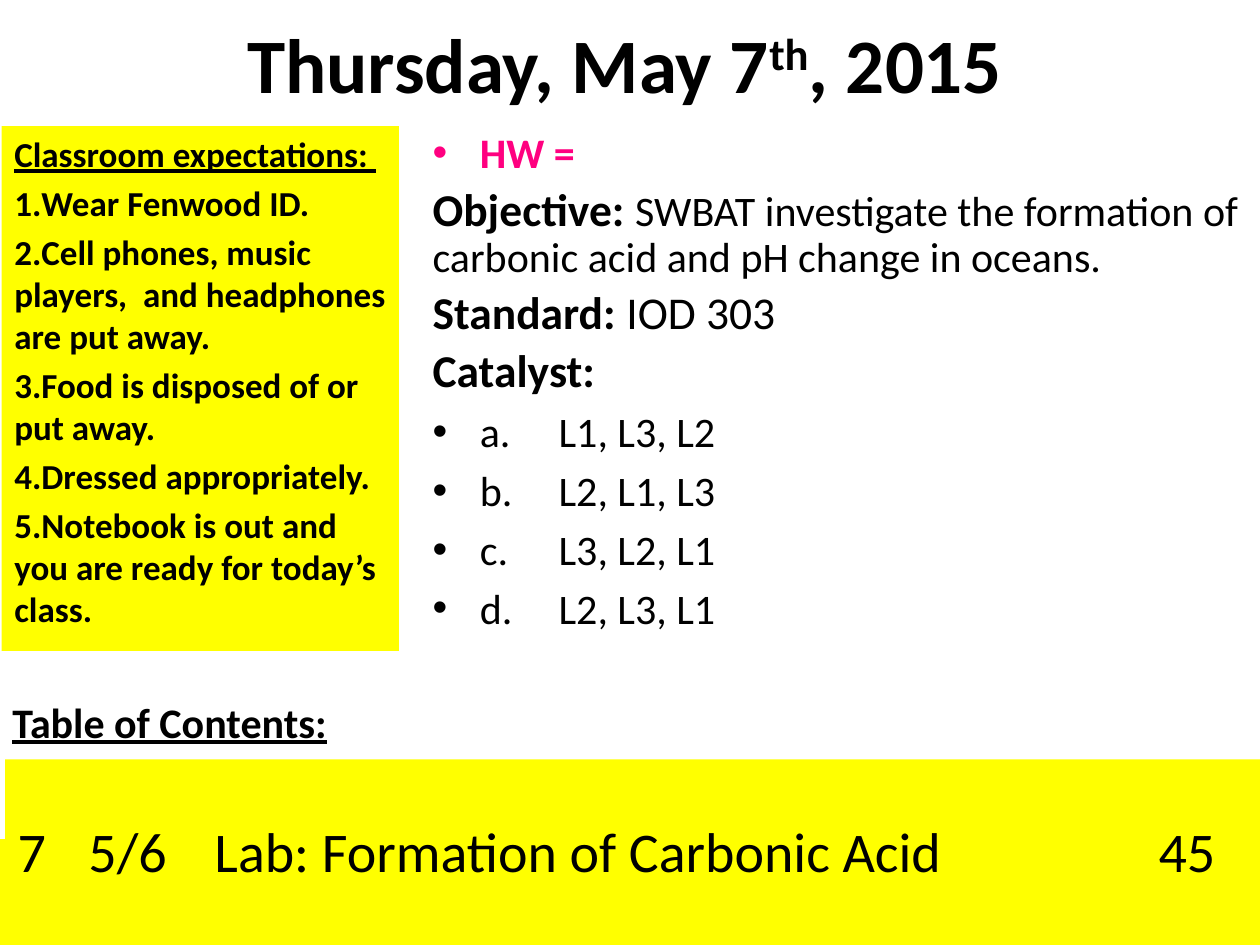
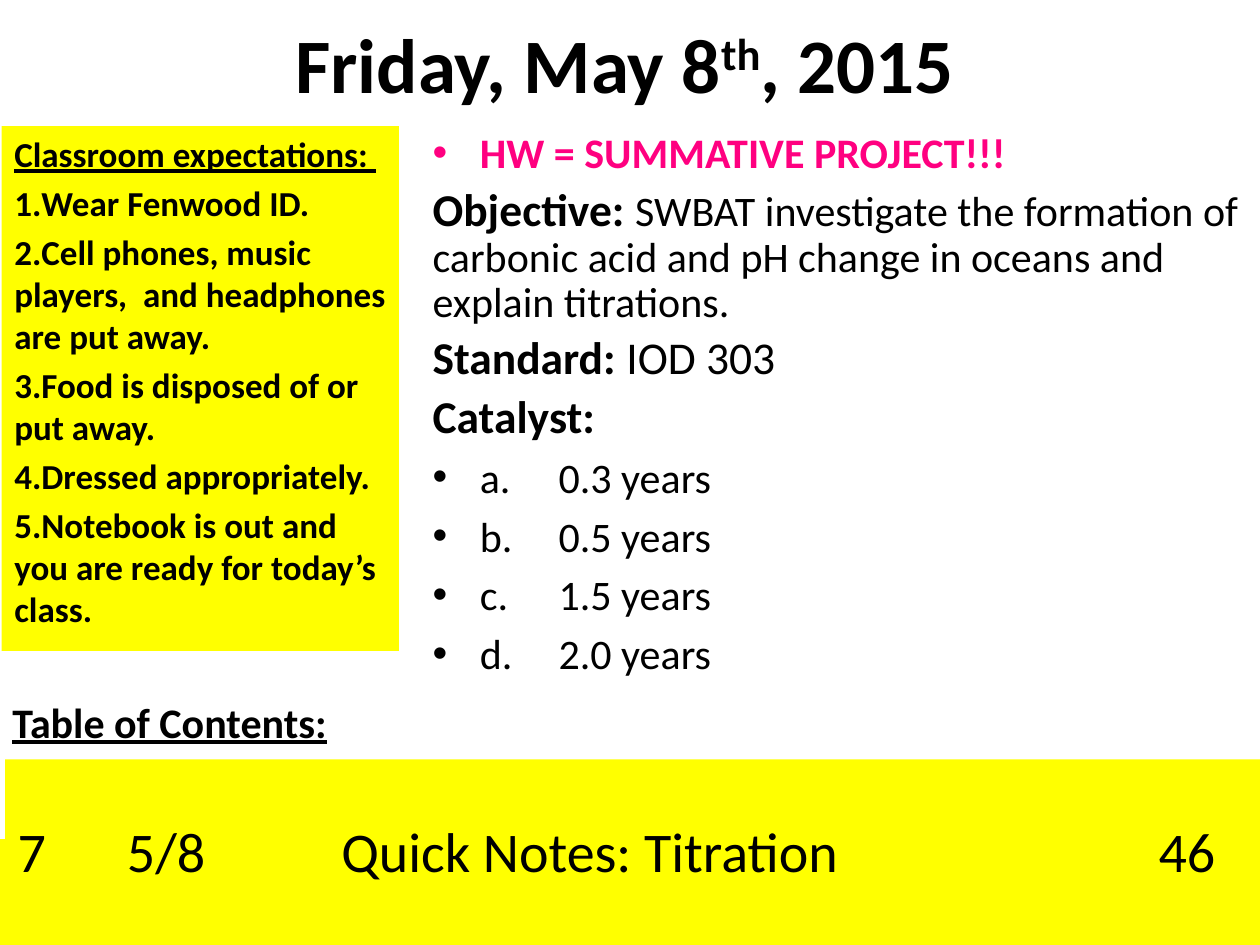
import pptx
import pptx.dml.color
import pptx.enum.shapes
import pptx.enum.text
import pptx.oxml
import pptx.oxml.ns
import pptx.util
from lxml import etree

Pt = pptx.util.Pt
RGBColor = pptx.dml.color.RGBColor
ANCHOR = pptx.enum.text.MSO_ANCHOR
ALIGN = pptx.enum.text.PP_ALIGN

BLACK = RGBColor(0x00, 0x00, 0x00)
YELLOW = RGBColor(0xFF, 0xFF, 0x00)
PINK = RGBColor(0xFF, 0x00, 0x80)
FONT = "Calibri"
TWO_CONTENT = 3
HANGING = 27

EXPECTATIONS = [
    "Wear Fenwood ID.",
    "Cell phones, music players,  and headphones are put away.",
    "Food is disposed of or put away.",
    "Dressed appropriately.",
    "Notebook is out and you are ready for today’s class.",
]

DAYS = [
    {
        "date": ("Thursday, May 7", ", 2015"),
        "homework": "HW =",
        "objective": "SWBAT investigate the formation of carbonic acid "
                     "and pH change in oceans.",
        "catalyst": ["L1, L3, L2", "L2, L1, L3", "L3, L2, L1", "L2, L3, L1"],
        "contents": ["7", "5/6", "Lab: Formation of Carbonic Acid", "45"],
        "tab_stops": [40.5, 112.5, 652],
    },
    {
        "date": ("Friday, May 8", ", 2015"),
        "homework": "HW = SUMMATIVE PROJECT!!!",
        "objective": "SWBAT investigate the formation of carbonic acid "
                     "and pH change in oceans and explain titrations.",
        "catalyst": ["0.3 years", "0.5 years", "1.5 years", "2.0 years"],
        "contents": ["7", "5/8", "Quick Notes: Titration", "46"],
        "tab_stops": [62.5, 185, 652],
    },
]


def add_child(parent, tag, **attributes):
    child = etree.SubElement(parent, pptx.oxml.ns.qn(tag))
    for name, value in attributes.items():
        child.set(name, str(value))
    return child


class AgendaDeck:
    def __init__(self):
        self.presentation = pptx.Presentation()
        self.presentation.slide_width = Pt(720)
        self.presentation.slide_height = Pt(540)
        self.slide = None

    def add_slide(self):
        layout = self.presentation.slide_layouts[TWO_CONTENT]
        self.slide = self.presentation.slides.add_slide(layout)

    def style(self, paragraph, size, color=BLACK, bold=None, underline=None):
        font = paragraph.font
        font.name, font.size, font.bold = FONT, Pt(size), bold
        font.underline = underline
        font.color.rgb = color

    def placeholder(self, index, left, top, width, height):
        shape = self.slide.placeholders[index]
        shape.left, shape.top = Pt(left), Pt(top)
        shape.width, shape.height = Pt(width), Pt(height)
        shape.text_frame.auto_size = pptx.enum.text.MSO_AUTO_SIZE.NONE
        shape.text_frame.word_wrap = True
        return shape

    def paragraph(self, frame, *texts, size, bullet=None, spacing=None, **style):
        """Fill the empty first paragraph, or add one, with one run per text."""
        first = not frame.paragraphs[0].runs
        paragraph = frame.paragraphs[0] if first else frame.add_paragraph()
        paragraph.space_before = Pt(0 if first else round(size * 0.2, 1))
        paragraph.line_spacing = spacing
        properties = paragraph._p.get_or_add_pPr()
        indent = Pt(HANGING) if bullet == "•" else 0
        properties.set("marL", str(indent))
        properties.set("indent", str(-indent))
        properties.set("defTabSz", str(Pt(72)))
        if bullet == "•":
            add_child(properties, "a:buFont", typeface="Arial")
            add_child(properties, "a:buChar", char=bullet)
        elif bullet == "1.":
            add_child(properties, "a:buFont", typeface="+mj-lt")
            add_child(properties, "a:buAutoNum", type="arabicPeriod")
        else:
            add_child(properties, "a:buNone")
        self.style(paragraph, size, **style)
        for text in texts:
            paragraph.add_run().text = text
        return paragraph

    def title(self, before, after):
        """Write the date with a raised "th"."""
        frame = self.placeholder(0, 36, 0, 642, 66).text_frame
        frame.vertical_anchor = ANCHOR.BOTTOM
        paragraph = self.paragraph(frame, before, "th", after, size=44, bold=True)
        paragraph.alignment = ALIGN.CENTER
        paragraph.runs[1]._r.get_or_add_rPr().set("baseline", "30000")

    def agenda(self, homework, objective, catalyst):
        frame = self.placeholder(1, 240, 72, 480, 362).text_frame
        self.paragraph(frame, homework, size=24, bullet="•", spacing=0.9,
                       color=PINK, bold=True)
        for label, text, size in [("Objective: ", objective, 24),
                                  ("Standard: ", "IOD 303", 26)]:
            paragraph = self.paragraph(frame, label, text, size=26, spacing=0.9)
            label_run, text_run = paragraph.runs
            label_run.font.bold = True
            text_run.font.size = Pt(size)
        self.paragraph(frame, "Catalyst:", size=26, spacing=0.9, bold=True)
        for letter, answer in zip("abcd", catalyst):
            self.paragraph(frame, f"{letter}.\t{answer}", size=24, bullet="•")

    def expectations(self):
        shape = self.placeholder(2, 1, 72, 227, 300)
        shape.fill.solid()
        shape.fill.fore_color.rgb = YELLOW
        frame = shape.text_frame
        self.paragraph(frame, "Classroom expectations: ", size=20, bold=True,
                       underline=True)
        for rule in EXPECTATIONS:
            self.paragraph(frame, rule, size=20, bullet="1.", bold=True)

    def band(self, left, top, width, height):
        shape = self.slide.shapes.add_shape(
            pptx.enum.shapes.MSO_SHAPE.RECTANGLE,
            Pt(left), Pt(top), Pt(width), Pt(height))
        shape.shadow.inherit = False
        shape.fill.solid()
        shape.fill.fore_color.rgb = YELLOW
        shape.line.fill.background()
        return shape

    def contents_heading(self):
        box = self.slide.shapes.add_textbox(Pt(0), Pt(394.3), Pt(226), Pt(36))
        box.text_frame.word_wrap = True
        self.paragraph(box.text_frame, "Table of Contents:", size=24, bold=True,
                       underline=True)

    def contents_row(self, entries, tab_stops):
        frame = self.band(3, 434, 717, 103).text_frame
        frame.word_wrap = True
        frame.vertical_anchor = ANCHOR.MIDDLE
        paragraph = frame.paragraphs[0]
        paragraph.alignment = ALIGN.LEFT
        tabs = add_child(paragraph._p.get_or_add_pPr(), "a:tabLst")
        for stop in tab_stops:
            add_child(tabs, "a:tab", pos=Pt(stop), algn="l")
        self.style(paragraph, 32)
        run = paragraph.add_run()
        run.text = "\t".join(entries)
        run.font.color.rgb = BLACK


def main():
    deck = AgendaDeck()
    for day in DAYS:
        deck.add_slide()
        deck.title(*day["date"])
        deck.agenda(day["homework"], day["objective"], day["catalyst"])
        deck.expectations()
        deck.band(0, 479.5, 720, 60.5)
        deck.contents_heading()
        deck.contents_row(day["contents"], day["tab_stops"])
    deck.presentation.save("out.pptx")


if __name__ == "__main__":
    main()
